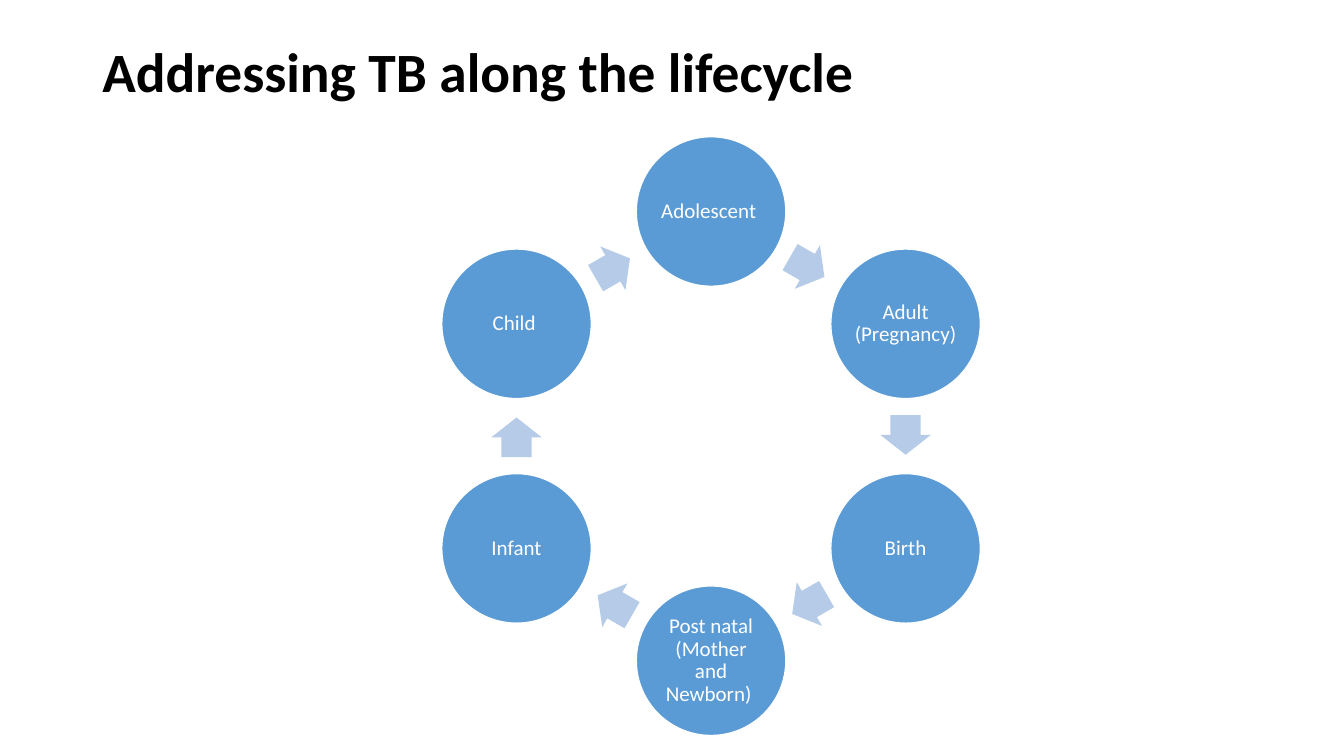
"""Build a slide showing the TB lifecycle as a ring of six stages."""
import math
from dataclasses import dataclass

import pptx
import pptx.dml.color
import pptx.enum.shapes
import pptx.enum.text
import pptx.util

Cm = pptx.util.Cm
Pt = pptx.util.Pt
RGBColor = pptx.dml.color.RGBColor
MSO_SHAPE = pptx.enum.shapes.MSO_SHAPE
MSO_ANCHOR = pptx.enum.text.MSO_ANCHOR
PP_ALIGN = pptx.enum.text.PP_ALIGN


@dataclass(frozen=True)
class Theme:
    font: str = "Calibri"
    title_size: float = 39.6
    stage_size: float = 15
    black: RGBColor = RGBColor(0x00, 0x00, 0x00)
    white: RGBColor = RGBColor(0xFF, 0xFF, 0xFF)
    stage: RGBColor = RGBColor(0x5B, 0x9B, 0xD5)
    arrow: RGBColor = RGBColor(0xB5, 0xCB, 0xE7)


theme = Theme()


def write(shape, text, size, color):
    """Put one styled paragraph into a shape and return it."""
    frame = shape.text_frame
    frame.word_wrap = True
    frame.vertical_anchor = MSO_ANCHOR.MIDDLE
    para = frame.paragraphs[0]
    para.text = text
    para.line_spacing = 0.9
    para.font.name = theme.font
    para.font.size = Pt(size)
    para.font.color.rgb = color
    return para


def add_centred(kind, x, y, width, height, fill):
    """Add a flat preset shape centred on a point given in centimetres."""
    shape = page.shapes.add_shape(
        kind, Cm(x - width / 2), Cm(y - height / 2), Cm(width), Cm(height))
    shape.shadow.inherit = False
    shape.fill.solid()
    shape.fill.fore_color.rgb = fill
    return shape


deck = pptx.Presentation()
deck.slide_width = Cm(33.87)
deck.slide_height = Cm(19.05)
page = deck.slides.add_slide(deck.slide_layouts[6])

title = page.shapes.add_textbox(Cm(2.33), Cm(1.02), Cm(29.21), Cm(1.73))
write(title, "Addressing TB along the lifecycle",
      theme.title_size, theme.black).font.bold = True

stages = ["Adolescent ", "Adult (Pregnancy)", "Birth",
          "Post natal (Mother and Newborn) ", "Infant", "Child "]
center_x, center_y = 17.92, 10.99
ring_radius = 5.66
stage_diameter = 3.77
arrow_length, arrow_width = 1.0, 1.27
arrow_setback = 0.03
step = 360 / len(stages)
arrow_radius = ring_radius * math.cos(math.radians(step / 2))

for index, stage in enumerate(stages):
    angle = math.radians(index * step - 90)
    circle = add_centred(
        MSO_SHAPE.OVAL,
        center_x + ring_radius * math.cos(angle),
        center_y + ring_radius * math.sin(angle),
        stage_diameter, stage_diameter, theme.stage)
    circle.line.color.rgb = theme.white
    circle.line.width = Pt(1)
    frame = circle.text_frame
    frame.margin_left = frame.margin_right = Cm(0.05)
    frame.margin_top = frame.margin_bottom = Cm(0.05)
    para = write(circle, stage, theme.stage_size, theme.white)
    para.alignment = PP_ALIGN.CENTER

    heading = (index + 0.5) * step
    direction = math.radians(heading)
    outward = direction - math.pi / 2
    arrow = add_centred(
        MSO_SHAPE.RIGHT_ARROW,
        center_x + arrow_radius * math.cos(outward) - arrow_setback * math.cos(direction),
        center_y + arrow_radius * math.sin(outward) - arrow_setback * math.sin(direction),
        arrow_length, arrow_width, theme.arrow)
    arrow.line.fill.background()
    arrow.adjustments[0] = 0.6
    arrow.adjustments[1] = 0.5
    arrow.rotation = heading

deck.save("out.pptx")
